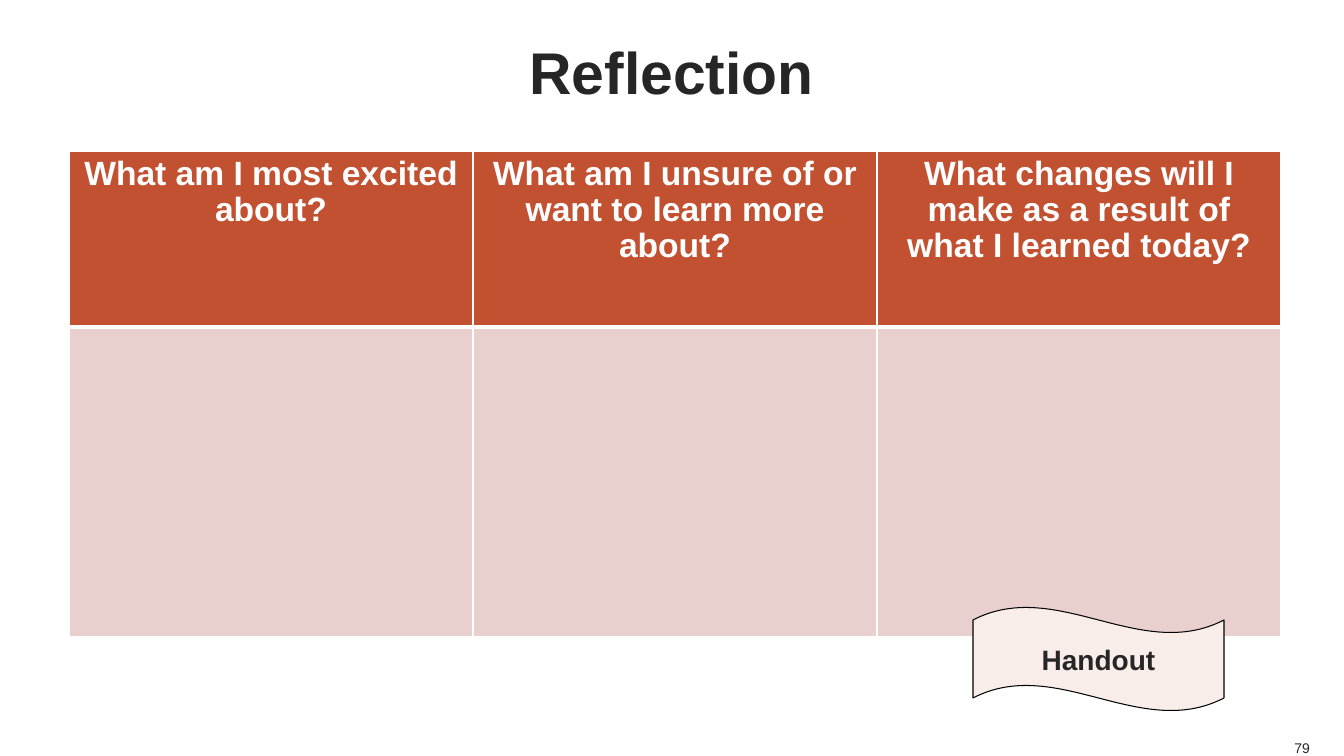
from lxml.etree import SubElement
from pptx import Presentation
from pptx.dml.color import RGBColor
from pptx.enum.shapes import MSO_SHAPE
from pptx.enum.text import MSO_ANCHOR, PP_ALIGN
from pptx.oxml.ns import qn
from pptx.util import Emu, Pt

INK, WHITE, RUST, ROSE, BLUSH = "262626", "FFFFFF", "C25131", "E9D0CE", "F9EDEA"
QUESTIONS = (
    "What am I most excited about?",
    "What am I unsure of or want to learn more about?",
    "What changes will I make as a result of what I learned today?",
)
COLUMN_WIDTH = 404
ROW_HEIGHTS = (176, 310)


def px(length):
    """Turn slide pixels into EMU."""
    return Emu(round(length * 914400 / 100.8))


def color(value):
    """Turn a hex string into a colour."""
    return RGBColor.from_string(value)


def write(frame, text, size, ink=INK, bold=True, align=PP_ALIGN.CENTER):
    """Write one formatted paragraph into a text frame."""
    para = frame.paragraphs[0]
    para.alignment = align
    span = para.add_run()
    span.text = text
    for name, value in {"name": "Arial", "size": Pt(size), "bold": bold}.items():
        setattr(span.font, name, value)
    span.font.color.rgb = color(ink)
    return para


def add_label(page, bounds, text, size, anchor, wrap=True, **style):
    """Add a text box without margins."""
    frame = page.shapes.add_textbox(*map(px, bounds)).text_frame
    layout = {"word_wrap": wrap, "vertical_anchor": anchor}
    layout.update(dict.fromkeys(
        ("margin_left", "margin_top", "margin_right", "margin_bottom"), 0))
    for name, value in layout.items():
        setattr(frame, name, value)
    write(frame, text, size, **style)


def style_cell(cell, fill, top, bottom):
    """Give a cell white borders and a solid fill."""
    properties = cell._tc.get_or_add_tcPr()
    for side, width in {"L": 1, "R": 1, "T": top, "B": bottom}.items():
        line = SubElement(properties, qn(f"a:ln{side}"), w=str(Pt(width)))
        SubElement(SubElement(line, qn("a:solidFill")), qn("a:srgbClr"), val=WHITE)
    cell.fill.solid()
    cell.fill.fore_color.rgb = color(fill)


def add_question_table(page, left, top):
    """Add the questions with an empty answer cell under each."""
    bounds = (left, top, COLUMN_WIDTH * len(QUESTIONS), sum(ROW_HEIGHTS))
    table = page.shapes.add_table(
        len(ROW_HEIGHTS), len(QUESTIONS), *map(px, bounds)).table
    for row, height in zip(table.rows, ROW_HEIGHTS):
        row.height = px(height)
    for index, question in enumerate(QUESTIONS):
        table.columns[index].width = px(COLUMN_WIDTH)
        header, answer = table.cell(0, index), table.cell(1, index)
        style_cell(header, RUST, 1, 3)
        style_cell(answer, ROSE, 3, 1)
        write(header.text_frame, question, 24, WHITE).line_spacing = 0.97


def add_wave(page, bounds, text):
    """Add an outlined wave with a centred label."""
    wave = page.shapes.add_shape(MSO_SHAPE.WAVE, *map(px, bounds))
    wave.shadow.inherit = False
    wave.fill.solid()
    wave.fill.fore_color.rgb = color(BLUSH)
    wave.line.color.rgb = color("000000")
    wave.line.width = Pt(0.75)
    wave.text_frame.vertical_anchor = MSO_ANCHOR.MIDDLE
    write(wave.text_frame, text, 20)


def main():
    """Build and save the reflection slide."""
    deck = Presentation()
    deck.slide_width, deck.slide_height = px(1344), px(756)
    page = deck.slides.add_slide(deck.slide_layouts[6])
    add_label(page, (50, 0, 1243, 141), "Reflection", 42, MSO_ANCHOR.MIDDLE)
    add_label(page, (1293, 739, 17, 17), "79", 10, MSO_ANCHOR.BOTTOM,
              wrap=False, bold=False, align=PP_ALIGN.RIGHT)
    add_question_table(page, 69, 151)
    add_wave(page, (973, 607, 251, 104), "Handout")
    deck.save("out.pptx")


if __name__ == "__main__":
    main()
